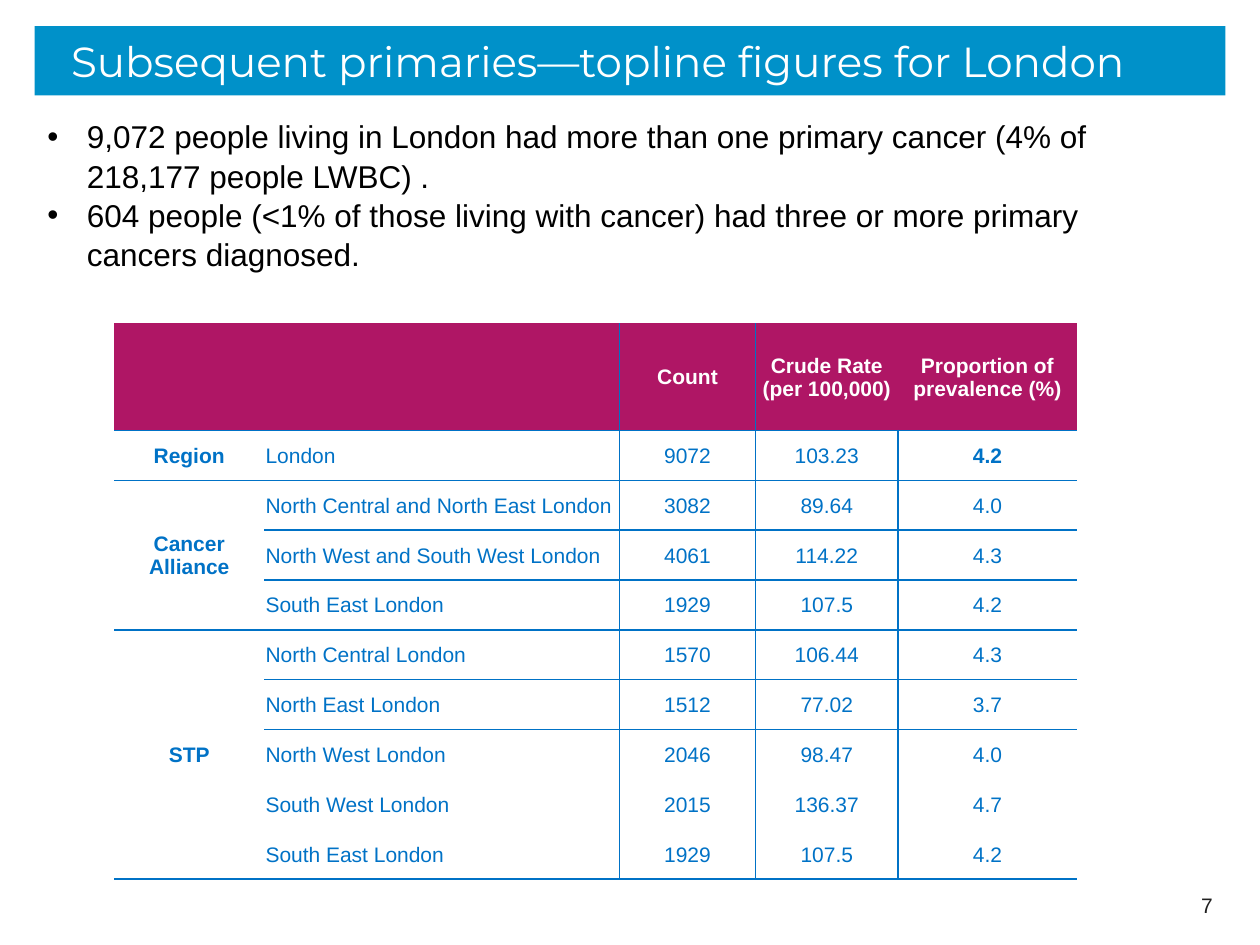
from lxml import etree
from pptx import Presentation
from pptx.dml.color import RGBColor
from pptx.enum.shapes import MSO_SHAPE
from pptx.enum.text import MSO_ANCHOR, PP_ALIGN
from pptx.oxml.ns import qn
from pptx.util import Pt

RECTANGLE = MSO_SHAPE.RECTANGLE
TOP, MIDDLE = MSO_ANCHOR.TOP, MSO_ANCHOR.MIDDLE
LEFT, CENTER, RIGHT = PP_ALIGN.LEFT, PP_ALIGN.CENTER, PP_ALIGN.RIGHT

BANNER_BLUE = RGBColor(0x00, 0x91, 0xC9)
TABLE_BLUE = RGBColor(0x00, 0x72, 0xC6)
MAGENTA = RGBColor(0xAF, 0x16, 0x65)
WHITE = RGBColor(0xFF, 0xFF, 0xFF)
BLACK = RGBColor(0x00, 0x00, 0x00)
DARK_GREY = RGBColor(0x20, 0x20, 0x20)

PLAIN_TABLE_STYLE = "{2D5ABB26-0587-4C30-8999-92F81FD0307C}"
COLUMN_WIDTHS = (85.7, 203, 77.8, 81.4, 102.2)
HEADER_HEIGHT, ROW_HEIGHT = 61.2, 28.5
GROUP_LAST_ROWS = (0, 1, 4, 9)
TOTAL_ROWS = (2, 5)
MERGES = ((0, 0, 0, 1), (2, 0, 4, 0), (5, 0, 9, 0))

BULLETS = (
    "9,072 people living in London had more than one primary cancer (4% of 218,177 people LWBC) .",
    "604 people (<1% of those living with cancer) had three or more primary cancers diagnosed.",
)
FIGURES = (
    ("", "", "Count", "Crude Rate\n(per 100,000)", "Proportion of prevalence (%)"),
    ("Region", "London", "9072", "103.23", "4.2"),
    ("Cancer Alliance", "North Central and North East London", "3082", "89.64", "4.0"),
    ("", "North West and South West London", "4061", "114.22", "4.3"),
    ("", "South East London", "1929", "107.5", "4.2"),
    ("STP", "North Central London", "1570", "106.44", "4.3"),
    ("", "North East London", "1512", "77.02", "3.7"),
    ("", "North West London", "2046", "98.47", "4.0"),
    ("", "South West London", "2015", "136.37", "4.7"),
    ("", "South East London", "1929", "107.5", "4.2"),
)


def rule_below(row, column):
    return row in GROUP_LAST_ROWS or (column > 0 and row in TOTAL_ROWS)


def rule_right(row, column):
    return column == 1 or (column == 2 and row > 0)


class SlidePainter:
    """Draws the elements of one slide in a shared style."""

    def __init__(self, slide, font="Arial"):
        self.slide = slide
        self.font = font

    def style(self, frame, size, color, align=LEFT, bold=False, font=None):
        for para in frame.paragraphs:
            para.alignment = align
            for span in para.runs:
                span.font.name = font or self.font
                span.font.size = Pt(size)
                span.font.bold = bold
                span.font.color.rgb = color

    def indent(self, para, margin, first_line=0):
        properties = para._p.get_or_add_pPr()
        properties.set("marL", str(Pt(margin)))
        properties.set("indent", str(Pt(first_line)))
        return properties

    def banner(self, text, left, top, width, height):
        box = self.slide.shapes.add_shape(RECTANGLE, Pt(left), Pt(top), Pt(width), Pt(height))
        box.shadow.inherit = False
        box.fill.solid()
        box.fill.fore_color.rgb = BANNER_BLUE
        box.line.fill.background()
        frame = box.text_frame
        frame.text = text
        frame.vertical_anchor = MIDDLE
        self.style(frame, 24, WHITE, font="Montserrat")
        self.indent(frame.paragraphs[0], 13.7)

    def text(self, text, left, top, width, height, size, color, align=LEFT, anchor=TOP):
        box = self.slide.shapes.add_textbox(Pt(left), Pt(top), Pt(width), Pt(height))
        frame = box.text_frame
        frame.word_wrap = True
        frame.vertical_anchor = anchor
        frame.text = text
        self.style(frame, size, color, align)
        return frame

    def bullets(self, items, left, top, width, height):
        frame = self.text("\n".join(items), left, top, width, height, 18, BLACK)
        for para in frame.paragraphs:
            para.line_spacing = 1.04
            properties = self.indent(para, 22.5, -22.5)
            etree.SubElement(properties, qn("a:buFont")).set("typeface", self.font)
            etree.SubElement(properties, qn("a:buChar")).set("char", "•")

    def borders(self, cell, row, column):
        last_row = row + cell.span_height - 1
        last_column = column + cell.span_width - 1
        sides = {
            "L": rule_right(row, column - 1),
            "R": rule_right(row, last_column),
            "T": rule_below(row - 1, column),
            "B": rule_below(last_row, column),
        }
        properties = cell._tc.get_or_add_tcPr()
        for side, ruled in sides.items():
            if ruled:
                line = etree.SubElement(properties, qn(f"a:ln{side}"), w=str(Pt(1)))
                fill = etree.SubElement(line, qn("a:solidFill"))
                etree.SubElement(fill, qn("a:srgbClr"), val=str(TABLE_BLUE))

    def cell(self, cell, text, row, column):
        header = row == 0
        cell.margin_left = cell.margin_top = cell.margin_right = Pt(0.75)
        cell.margin_bottom = Pt(0)
        cell.vertical_anchor = MIDDLE
        cell.text = text
        bold = header or column == 0 or (row, column) == (1, 4)
        align = LEFT if column == 1 else CENTER
        self.style(cell.text_frame, 12, WHITE if header else TABLE_BLUE, align, bold)
        self.borders(cell, row, column)
        if header:
            cell.fill.solid()
            cell.fill.fore_color.rgb = MAGENTA
        else:
            cell.fill.background()

    def table(self, rows, left, top):
        heights = [HEADER_HEIGHT] + [ROW_HEIGHT] * (len(rows) - 1)
        frame = self.slide.shapes.add_table(
            len(rows), len(COLUMN_WIDTHS), Pt(left), Pt(top),
            Pt(sum(COLUMN_WIDTHS)), Pt(sum(heights)))
        table = frame.table
        table.horz_banding = False
        table._tbl.tblPr.find(qn("a:tableStyleId")).text = PLAIN_TABLE_STYLE
        for column, width in zip(table.columns, COLUMN_WIDTHS):
            column.width = Pt(width)
        for row, height in zip(table.rows, heights):
            row.height = Pt(height)
        for first_row, first_column, last_row, last_column in MERGES:
            table.cell(first_row, first_column).merge(table.cell(last_row, last_column))
        for row, values in enumerate(rows):
            for column, value in enumerate(values):
                self.cell(table.cell(row, column), value, row, column)


def main():
    deck = Presentation()
    deck.slide_width, deck.slide_height = Pt(720), Pt(540)
    page = SlidePainter(deck.slides.add_slide(deck.slide_layouts[6]))
    page.banner("Subsequent primaries—topline figures for London", 19.8, 15, 680.4, 39.6)
    page.text("7", 532, 502.6, 168, 28.8, 12, DARK_GREY, RIGHT, MIDDLE)
    page.table(FIGURES, 65.3, 184.8)
    page.bullets(BULLETS, 20, 62.6, 669, 94.3)
    deck.save("out.pptx")


if __name__ == "__main__":
    main()
